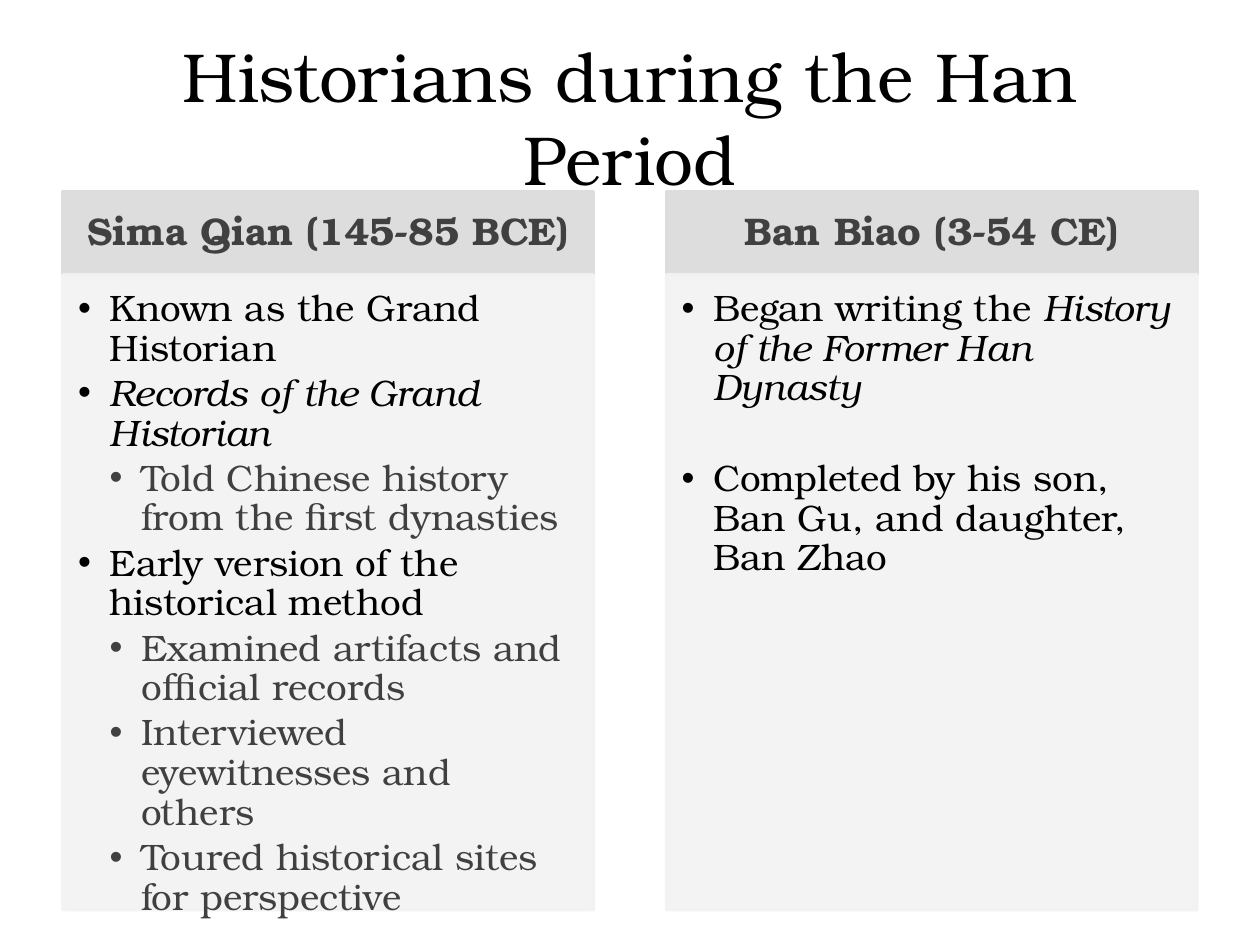
import dataclasses

import lxml.etree
import pptx
import pptx.dml.color
import pptx.enum.text
import pptx.oxml.ns
import pptx.util

Inches, Pt = pptx.util.Inches, pptx.util.Pt
Align, Anchor = pptx.enum.text.PP_ALIGN, pptx.enum.text.MSO_ANCHOR
qn = pptx.oxml.ns.qn


@dataclasses.dataclass(frozen=True)
class Theme:
    """Colours, type sizes in points and lengths in inches."""
    font: str = "TeX Gyre Bonum"
    ink: str = "000000"
    muted: str = "404040"
    header_fill: str = "DDDDDD"
    body_fill: str = "F2F2F2"
    body_alpha: int = 90
    title_size: float = 39.6
    header_size: float = 22
    body_size: float = 21
    line_spacing: float = 0.9
    margin: float = 0.5
    column_width: float = 4.21
    column_gap: float = 0.58
    header_top: float = 1.52
    header_height: float = 0.66
    body_height: float = 5.04
    indent: float = 0.25


THEME = Theme()
GROUP_GAP = 26

HISTORIANS = [
    ("Sima Qian (145-85 BCE)", [
        (0, [("Known as the Grand Historian", False)], 0),
        (0, [("Records of the Grand Historian", True)], 0),
        (1, [("Told Chinese history from the first dynasties", False)], 0),
        (0, [("Early version of the historical method", False)], 0),
        (1, [("Examined artifacts and official records", False)], 0),
        (1, [("Interviewed eyewitnesses and others", False)], 0),
        (1, [("Toured historical sites for perspective", False)], 0),
    ]),
    ("Ban Biao (3-54 CE)", [
        (0, [("Began writing the ", False),
             ("History of the Former Han Dynasty", True)], 0),
        (0, [("Completed by his son, Ban Gu, and daughter, Ban Zhao", False)],
         GROUP_GAP),
    ]),
]


def place(holder, left, top, width, height):
    """Move a placeholder to a rectangle given in inches."""
    holder.left, holder.top = Inches(left), Inches(top)
    holder.width, holder.height = Inches(width), Inches(height)


def set_frame(frame, anchor, insets=(0.1, 0.05, 0.1, 0.05)):
    """Set wrapping, anchor and insets of a text frame."""
    frame.word_wrap = True
    frame.auto_size = pptx.enum.text.MSO_AUTO_SIZE.NONE
    frame.vertical_anchor = anchor
    (frame.margin_left, frame.margin_top,
     frame.margin_right, frame.margin_bottom) = map(Inches, insets)


def style_run(run, size, color, bold=False, italic=False):
    """Apply the theme font with a size, colour and emphasis."""
    run.font.name = THEME.font
    run.font.size = Pt(size)
    run.font.color.rgb = pptx.dml.color.RGBColor.from_string(color)
    run.font.bold = bold
    run.font.italic = italic


def space(paragraph, before, after):
    """Set line spacing and the gaps around a paragraph in points."""
    paragraph.line_spacing = THEME.line_spacing
    paragraph.space_before = Pt(before)
    paragraph.space_after = Pt(after)


def paint(panel, color, alpha=100):
    """Give a panel one colour and opacity for fill and outline."""
    panel.line.width = Pt(2)
    for fill in (panel.fill, panel.line.fill):
        fill.solid()
        fill.fore_color.rgb = pptx.dml.color.RGBColor.from_string(color)
    if alpha < 100:
        for tint in panel.element.spPr.iter(qn("a:srgbClr")):
            lxml.etree.SubElement(tint, qn("a:alpha"), val=str(alpha * 1000))


def add_bullet(paragraph, level):
    """Hang a round bullet at the indent of the level."""
    paragraph.level = level
    properties = paragraph._p.get_or_add_pPr()
    properties.set("marL", str(Inches(THEME.indent * (level + 1))))
    properties.set("indent", str(-Inches(THEME.indent)))
    lxml.etree.SubElement(properties, qn("a:buChar"), char="•")


def fill_title(title, text):
    """Write the slide title."""
    place(title, THEME.margin, 0.3, 9, 1.25)
    title.text_frame.text = text
    set_frame(title.text_frame, Anchor.MIDDLE)
    heading = title.text_frame.paragraphs[0]
    heading.alignment = Align.CENTER
    style_run(heading.runs[0], THEME.title_size, THEME.ink)


def fill_header(header, left, name):
    """Write a historian's name on a grey band."""
    place(header, left, THEME.header_top, THEME.column_width, THEME.header_height)
    paint(header, THEME.header_fill)
    header.text_frame.text = name
    set_frame(header.text_frame, Anchor.MIDDLE, (0.17, 0.1, 0.17, 0.1))
    heading = header.text_frame.paragraphs[0]
    heading.alignment = Align.CENTER
    space(heading, 0, 0)
    style_run(heading.runs[0], THEME.header_size, THEME.muted, bold=True)


def fill_body(body, left, facts):
    """Write the two-level list of facts on a pale panel."""
    place(body, left, THEME.header_top + THEME.header_height,
          THEME.column_width, THEME.body_height)
    paint(body, THEME.body_fill, THEME.body_alpha)
    frame = body.text_frame
    set_frame(frame, Anchor.TOP, (0.12, 0.12, 0.16, 0.18))
    for number, (level, phrases, gap) in enumerate(facts):
        fact = frame.add_paragraph() if number else frame.paragraphs[0]
        fact.alignment = Align.LEFT
        space(fact, gap, THEME.body_size * 0.15)
        add_bullet(fact, level)
        for words, italic in phrases:
            phrase = fact.add_run()
            phrase.text = words
            style_run(phrase, THEME.body_size,
                      THEME.muted if level else THEME.ink, italic=italic)


def main():
    """Build the comparison slide and save it."""
    deck = pptx.Presentation()
    deck.slide_width, deck.slide_height = Inches(10), Inches(7.5)
    slide = deck.slides.add_slide(deck.slide_layouts.get_by_name("Comparison"))
    fill_title(slide.shapes.title, "Historians during the Han Period")
    holders = {holder.placeholder_format.idx: holder
               for holder in slide.placeholders}
    for column, (name, facts) in enumerate(HISTORIANS):
        left = THEME.margin + column * (THEME.column_width + THEME.column_gap)
        fill_header(holders[2 * column + 1], left, name)
        fill_body(holders[2 * column + 2], left, facts)
    deck.save("out.pptx")


if __name__ == "__main__":
    main()
